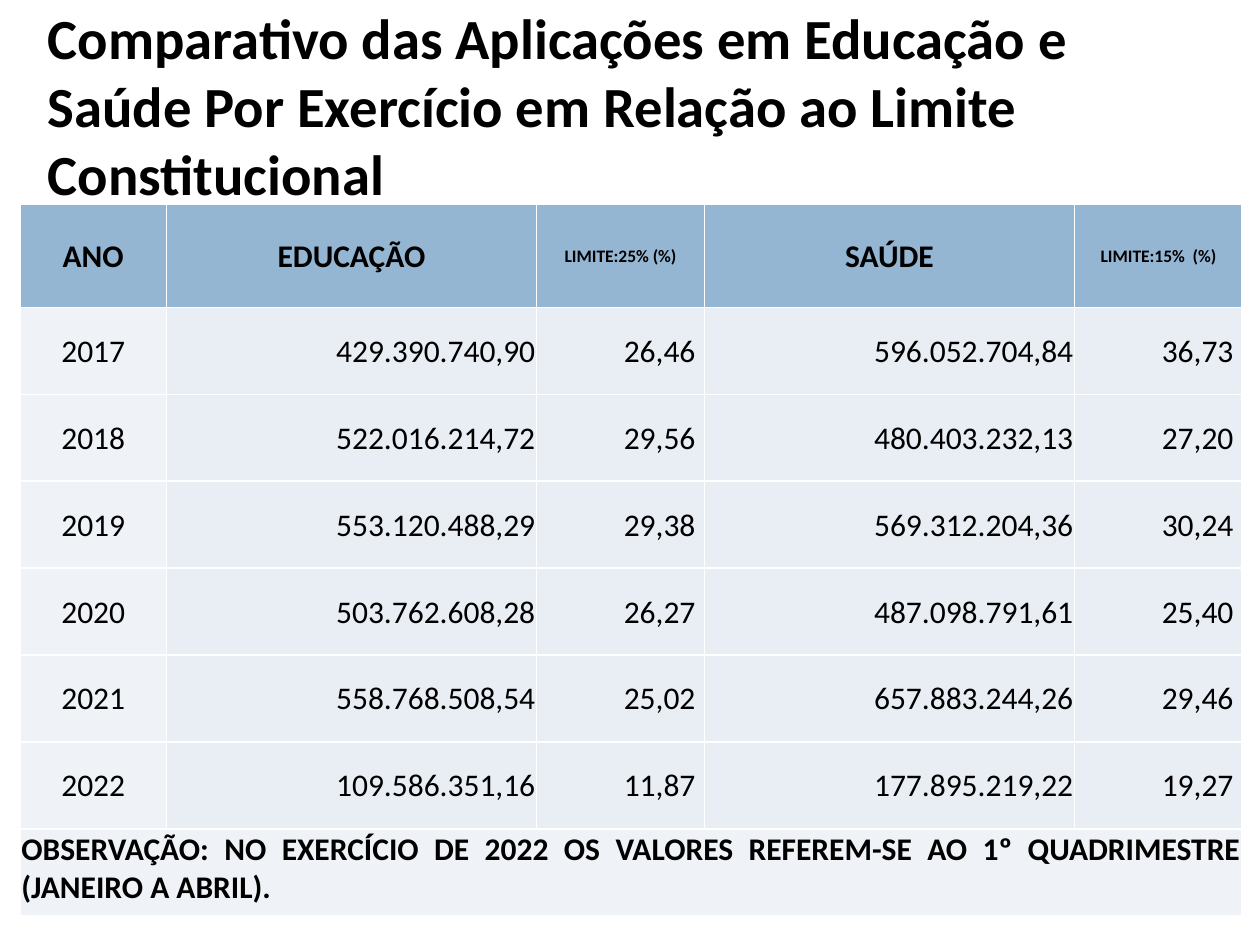
from pptx import Presentation
from pptx.dml.color import RGBColor
from pptx.enum.text import MSO_ANCHOR, MSO_AUTO_SIZE, PP_ALIGN
from pptx.oxml import parse_xml
from pptx.oxml.ns import nsdecls
from pptx.util import Inches, Pt

# Content
TITLE = ("Comparativo das Aplicações em Educação e Saúde Por Exercício "
         "em Relação ao Limite Constitucional")
HEADERS = ["ANO", "EDUCAÇÃO", "LIMITE:25% (%)", "SAÚDE", "LIMITE:15%  (%)"]
ROWS = [
    ("2017", "429.390.740,90", "26,46", "596.052.704,84", "36,73"),
    ("2018", "522.016.214,72", "29,56", "480.403.232,13", "27,20"),
    ("2019", "553.120.488,29", "29,38", "569.312.204,36", "30,24"),
    ("2020", "503.762.608,28", "26,27", "487.098.791,61", "25,40"),
    ("2021", "558.768.508,54", "25,02", "657.883.244,26", "29,46"),
    ("2022", "109.586.351,16", "11,87", "177.895.219,22", "19,27"),
]
NOTE = ("OBSERVAÇÃO: NO EXERCÍCIO DE 2022 OS VALORES REFEREM-SE AO "
        "1º QUADRIMESTRE (JANEIRO A ABRIL).")

# Theme and layout
THEME = {
    "font": "Calibri", "text": "000000", "border": "FFFFFF",
    "header": "94B6D2", "year": "EFF3F7", "value": "E9EDF4",
    "title_pt": 32.4, "body_pt": 18, "limit_pt": 10,
}
COL_WIDTHS = [1.16, 2.94, 1.33, 2.94, 1.33]
HEADER_H, ROW_H = 0.82, 0.69
TABLE_LEFT, TABLE_TOP = 0.16, 1.62
LIMIT_COLS = (2, 4)
PAD, LIMIT_PAD = 0.01, 0.07


def add_run(p, text, size, bold):
    r = p.add_run()
    r.text = text
    r.font.name = THEME["font"]
    r.font.size = Pt(size)
    r.font.bold = bold
    r.font.color.rgb = RGBColor.from_string(THEME["text"])


def add_borders(cell):
    tc_pr = cell._tc.get_or_add_tcPr()
    for i, side in enumerate(("lnL", "lnR", "lnT", "lnB")):
        tc_pr.insert(i, parse_xml(
            f'<a:{side} {nsdecls("a")} w="{Pt(1)}"><a:solidFill>'
            f'<a:srgbClr val="{THEME["border"]}"/></a:solidFill></a:{side}>'))


def style_cell(cell, fill):
    cell.fill.solid()
    cell.fill.fore_color.rgb = RGBColor.from_string(THEME[fill])
    cell.margin_left = cell.margin_right = cell.margin_top = Inches(PAD)
    cell.margin_bottom = 0
    add_borders(cell)


def write_cell(cell, text, align, size=THEME["body_pt"], bold=False,
               anchor=MSO_ANCHOR.MIDDLE):
    cell.vertical_anchor = anchor
    p = cell.text_frame.paragraphs[0]
    p.alignment = align
    add_run(p, text, size, bold)


def add_title(slide):
    sp = slide.shapes.title
    sp.left, sp.top = Inches(0.28), Inches(0.21)
    sp.width, sp.height = Inches(9.45), Inches(1.25)
    tf = sp.text_frame
    tf.word_wrap = True
    tf.auto_size = MSO_AUTO_SIZE.NONE
    tf.vertical_anchor = MSO_ANCHOR.MIDDLE
    p = tf.paragraphs[0]
    p.alignment = PP_ALIGN.LEFT
    add_run(p, TITLE, THEME["title_pt"], True)


def add_spending_table(slide):
    heights = [HEADER_H] + [ROW_H] * (len(ROWS) + 1)
    frame = slide.shapes.add_table(
        len(heights), len(COL_WIDTHS), Inches(TABLE_LEFT), Inches(TABLE_TOP),
        Inches(sum(COL_WIDTHS)), Inches(sum(heights)))
    table = frame.table
    table.horz_banding = False
    for col, width in zip(table.columns, COL_WIDTHS):
        col.width = Inches(width)
    for row, height in zip(table.rows, heights):
        row.height = Inches(height)

    # Header row
    for c, text in enumerate(HEADERS):
        cell = table.cell(0, c)
        style_cell(cell, "header")
        size = THEME["limit_pt" if c in LIMIT_COLS else "body_pt"]
        write_cell(cell, text, PP_ALIGN.CENTER, size, True)

    # One row per year
    for r, values in enumerate(ROWS, start=1):
        for c, text in enumerate(values):
            cell = table.cell(r, c)
            style_cell(cell, "value" if c else "year")
            if c in LIMIT_COLS:
                cell.margin_right = Inches(LIMIT_PAD)
            write_cell(cell, text, PP_ALIGN.RIGHT if c else PP_ALIGN.CENTER)

    # Note across the last row
    last = len(heights) - 1
    for c in range(len(COL_WIDTHS)):
        style_cell(table.cell(last, c), "year")
    note = table.cell(last, 0)
    note.merge(table.cell(last, len(COL_WIDTHS) - 1))
    write_cell(note, NOTE, PP_ALIGN.JUSTIFY, bold=True, anchor=MSO_ANCHOR.TOP)


def main():
    prs = Presentation()
    prs.slide_width, prs.slide_height = Inches(10), Inches(7.5)
    slide = prs.slides.add_slide(prs.slide_layouts[5])
    add_title(slide)
    add_spending_table(slide)
    prs.save("out.pptx")


if __name__ == "__main__":
    main()
